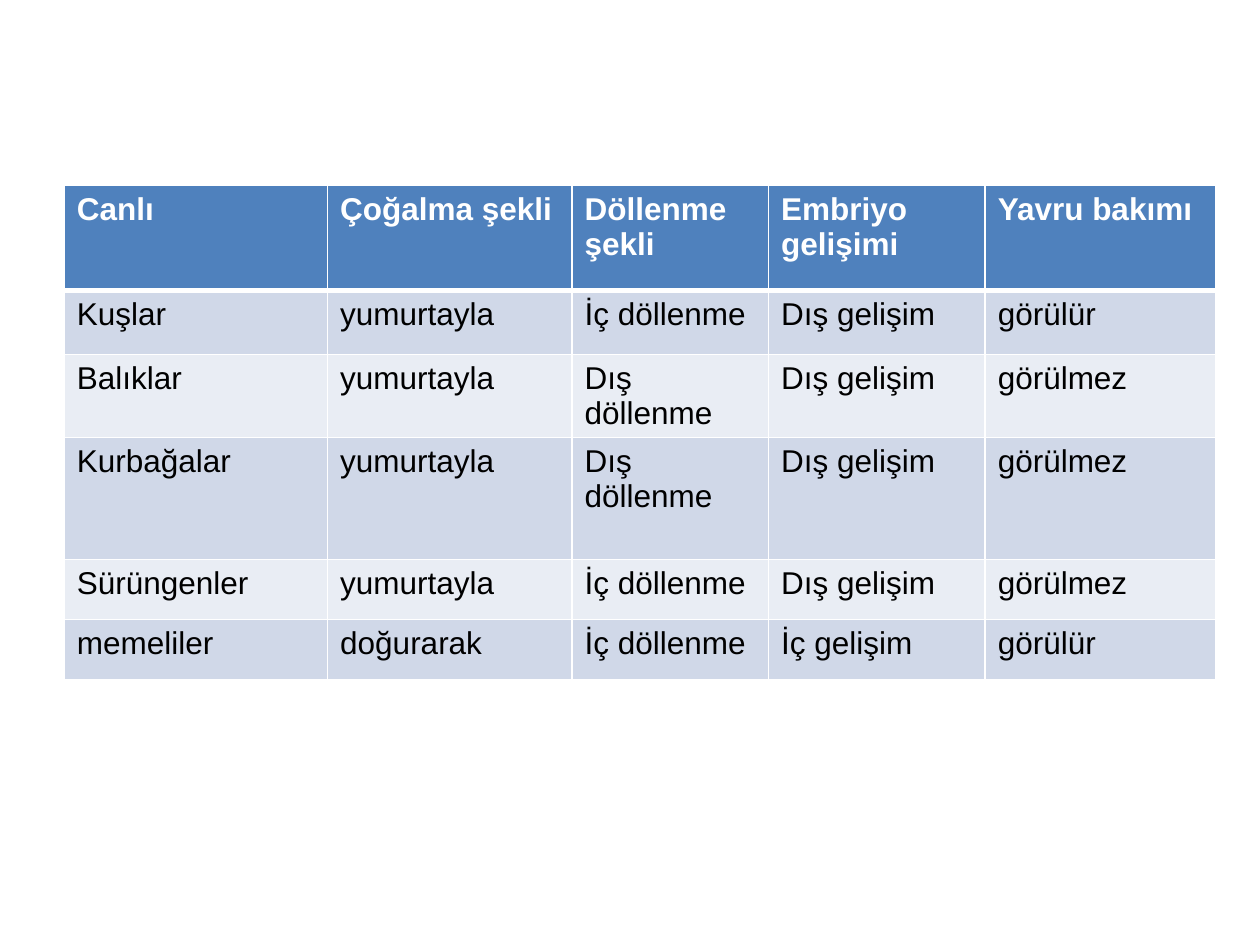
from dataclasses import dataclass

from lxml.etree import SubElement as Sub
from pptx import Presentation as Deck
from pptx.dml.color import RGBColor as Color
from pptx.oxml.ns import qn
from pptx.table import _Cell as Cell
from pptx.util import Pt

HUES = {
    "head": "4F81BD",
    "dark": "D0D8E8",
    "light": "E9EDF4",
    "white": "FFFFFF",
    "black": "000000",
}
LEFT, TOP = 36.72, 105.84
WIDTHS = (150.5, 139.7, 112.3, 123.8, 131.8)


@dataclass(frozen=True)
class Look:
    fill: str
    ink: str
    bold: bool = False
    top: float = 1
    base: float = 1


@dataclass(frozen=True)
class Row:
    height: float
    look: Look
    words: tuple[str, ...]


HEAD = Look("head", "white", bold=True, base=3)
FIRST = Look("dark", "black", top=3)
DARK = Look("dark", "black")
LIGHT = Look("light", "black")

ROWS = (
    Row(60, HEAD, ("Canlı", "Çoğalma şekli", "Döllenme şekli", "Embriyo gelişimi", "Yavru bakımı")),
    Row(36.7, FIRST, ("Kuşlar", "yumurtayla", "İç döllenme", "Dış gelişim", "görülür")),
    Row(47.5, LIGHT, ("Balıklar", "yumurtayla", "Dış döllenme", "Dış gelişim", "görülmez")),
    Row(69.6, DARK, ("Kurbağalar", "yumurtayla", "Dış döllenme", "Dış gelişim", "görülmez")),
    Row(34.5, LIGHT, ("Sürüngenler", "yumurtayla", "İç döllenme", "Dış gelişim", "görülmez")),
    Row(34.5, DARK, ("memeliler", "doğurarak", "İç döllenme", "İç gelişim", "görülür")),
)


def edge(cell: Cell, look: Look) -> None:
    props = cell._tc.get_or_add_tcPr()
    sides = {"lnL": 1, "lnR": 1, "lnT": look.top, "lnB": look.base}
    for side, width in sides.items():
        line = Sub(props, qn(f"a:{side}"), w=str(Pt(width)))
        fill = Sub(line, qn("a:solidFill"))
        Sub(fill, qn("a:srgbClr"), val=HUES["white"])


def draw(cell: Cell, text: str, look: Look) -> None:
    edge(cell, look)
    cell.fill.solid()
    cell.fill.fore_color.rgb = Color.from_string(HUES[look.fill])
    cell.text = text
    font = cell.text_frame.paragraphs[0].runs[0].font
    form = {"name": "Arial", "size": Pt(18), "bold": look.bold}
    for name, value in form.items():
        setattr(font, name, value)
    font.color.rgb = Color.from_string(HUES[look.ink])


def main() -> None:
    deck = Deck()
    deck.slide_width, deck.slide_height = Pt(720), Pt(540)
    slide = deck.slides.add_slide(deck.slide_layouts[6])
    high = sum(row.height for row in ROWS)
    frame = slide.shapes.add_table(
        len(ROWS), len(WIDTHS), Pt(LEFT), Pt(TOP), Pt(sum(WIDTHS)), Pt(high)
    )
    table = frame.table
    for col, width in zip(table.columns, WIDTHS):
        col.width = Pt(width)
    for line, row in zip(table.rows, ROWS):
        line.height = Pt(row.height)
        for cell, text in zip(line.cells, row.words):
            draw(cell, text, row.look)
    deck.save("out.pptx")


if __name__ == "__main__":
    main()
